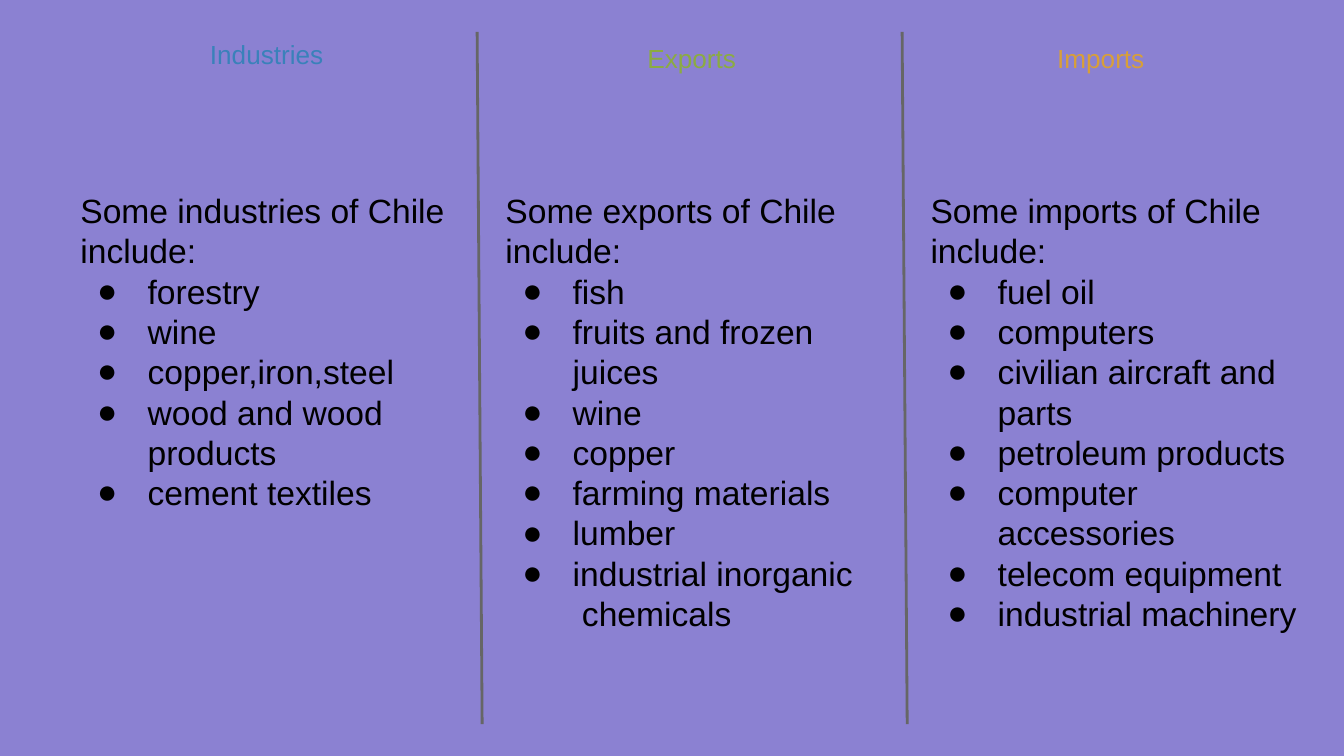
from dataclasses import dataclass

from lxml.etree import SubElement
from pptx import Presentation
from pptx.dml.color import RGBColor as RGB
from pptx.enum.shapes import MSO_CONNECTOR as Connector
from pptx.enum.text import MSO_ANCHOR as Anchor, PP_ALIGN as Align
from pptx.oxml.ns import qn
from pptx.util import Pt

PX = 5715  # EMU; 160 px to the inch
NO_BREAK_SPACE = chr(160)
WIDE_GAP = f" {NO_BREAK_SPACE}" * 2


@dataclass(frozen=True)
class Theme:
    background: str = "8B81D2"
    text: str = "000000"
    divider: str = "666666"
    industries: str = "3A81BA"
    exports: str = "8BAB42"
    imports: str = "D89F39"
    font: str = "Arial"
    heading_size: int = 14
    body_size: int = 18
    divider_width: float = 1.5


THEME = Theme()
COLUMN_LEFT, COLUMN_PITCH, COLUMN_WIDTH = 80, 506, 475
BODY_TOP, BODY_HEIGHT = 210, 651
HEADING_HEIGHT = 198
DIVIDER_LEFT, DIVIDER_TOP, DIVIDER_BOTTOM, DIVIDER_SLANT = 568, 38, 862, 6

# heading, colour, heading box (left, top, width), introduction, items
COLUMNS = [
    ("Industries", THEME.industries, (80, 38, 475),
     "Some industries of Chile include:",
     ["forestry", "wine", "copper,iron,steel", "wood and wood products",
      "cement textiles"]),
    ("Exports", THEME.exports, (586, 43, 475),
     "Some exports of Chile include:",
     ["fish", "fruits and frozen juices", "wine", "copper",
      "farming materials", "lumber",
      f"industrial inorganic{WIDE_GAP}chemicals"]),
    ("Imports", THEME.imports, (1101, 43, 419),
     "Some imports of Chile include:",
     ["fuel oil", "computers", "civilian aircraft and parts",
      "petroleum products", "computer accessories", "telecom equipment",
      "industrial machinery"]),
]


def add_text_frame(slide, left, top, width, height, vertical_inset):
    box = slide.shapes.add_textbox(left * PX, top * PX, width * PX, height * PX)
    frame = box.text_frame
    frame.word_wrap = True
    frame.vertical_anchor = Anchor.TOP
    frame.margin_left = frame.margin_right = 16 * PX
    frame.margin_top = frame.margin_bottom = vertical_inset * PX
    return frame


def write(paragraph, text, *, size, color, align=Align.LEFT):
    paragraph.alignment = align
    run = paragraph.add_run()
    run.text = text
    run.font.name = THEME.font
    run.font.size = Pt(size)
    run.font.color.rgb = RGB.from_string(color)


def add_bullet(paragraph, indent=80, hanging=60):
    properties = paragraph._p.get_or_add_pPr()
    properties.set("marL", str(indent * PX))
    properties.set("indent", str(-hanging * PX))
    color = SubElement(properties, qn("a:buClr"))
    SubElement(color, qn("a:srgbClr"), val=THEME.text)
    SubElement(properties, qn("a:buFont"), typeface=THEME.font)
    SubElement(properties, qn("a:buChar"), char="●")


def add_heading(slide, text, color, place):
    frame = add_text_frame(slide, *place, HEADING_HEIGHT, vertical_inset=8)
    write(frame.paragraphs[0], text, size=THEME.heading_size, color=color,
          align=Align.CENTER)


def add_list(slide, left, introduction, items):
    frame = add_text_frame(slide, left, BODY_TOP, COLUMN_WIDTH, BODY_HEIGHT,
                           vertical_inset=16)
    style = dict(size=THEME.body_size, color=THEME.text)
    write(frame.paragraphs[0], introduction, **style)
    for item in items:
        paragraph = frame.add_paragraph()
        write(paragraph, item, **style)
        add_bullet(paragraph)


def add_divider(slide, left):
    line = slide.shapes.add_connector(
        Connector.STRAIGHT, left * PX, DIVIDER_TOP * PX,
        (left + DIVIDER_SLANT) * PX, DIVIDER_BOTTOM * PX)
    line.line.color.rgb = RGB.from_string(THEME.divider)
    line.line.width = Pt(THEME.divider_width)
    SubElement(line._element.spPr, qn("a:effectLst"))


def main():
    presentation = Presentation()
    presentation.slide_width = 1600 * PX
    presentation.slide_height = 900 * PX
    slide = presentation.slides.add_slide(presentation.slide_layouts[6])
    fill = slide.background.fill
    fill.solid()
    fill.fore_color.rgb = RGB.from_string(THEME.background)

    for index, (heading, color, place, introduction, items) in enumerate(COLUMNS):
        offset = index * COLUMN_PITCH
        add_heading(slide, heading, color, place)
        add_list(slide, COLUMN_LEFT + offset, introduction, items)
        if index < len(COLUMNS) - 1:
            add_divider(slide, DIVIDER_LEFT + offset)

    presentation.save("out.pptx")


if __name__ == "__main__":
    main()
